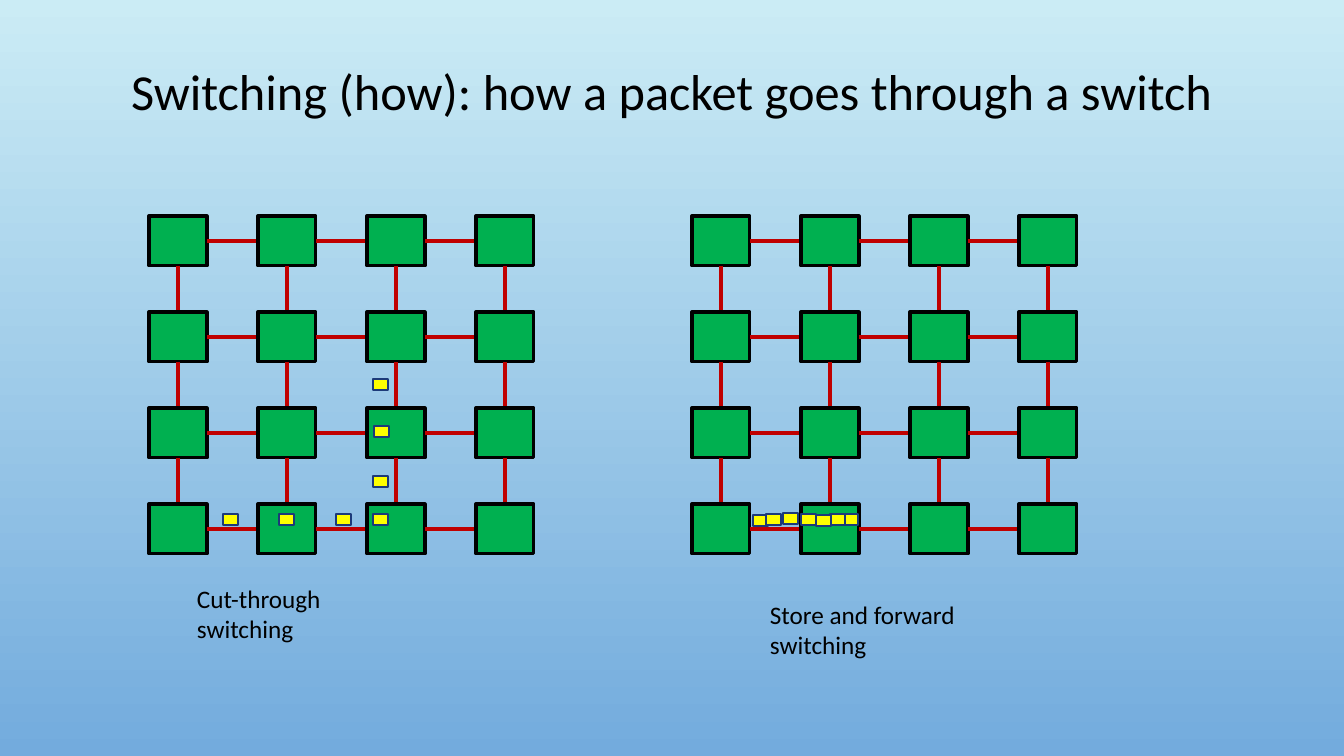
from itertools import product

from pptx import Presentation
from pptx.dml.color import RGBColor
from pptx.enum.shapes import MSO_CONNECTOR, MSO_SHAPE
from pptx.enum.text import MSO_ANCHOR, PP_ALIGN
from pptx.oxml.ns import qn
from pptx.util import Pt
from lxml.etree import SubElement

# Content, lengths in px
TITLE = ("Switching (how): how a packet goes through a switch", (101, 32, 1142, 124))
MESHES = [
    {
        "left": 149,
        "label": "Cut-through switching",
        "label_box": (187, 578, 235, 40),
        "packets": [(373, 379), (374, 426), (373, 476), (373, 514),
                    (336, 514), (279, 514), (223, 514)],
    },
    {
        "left": 692,
        "label": "Store and forward switching",
        "label_box": (760, 594, 306, 40),
        "packets": [(783, 513), (753, 515), (843, 514), (830, 514),
                    (816, 515), (801, 514), (766, 514)],
    },
]

# Geometry, in px
SLIDE_W, SLIDE_H = 1344, 756
EMU_PER_PX = 914400 / 100.8
MESH_SIZE = 4
MESH_TOP = 216
COLUMN_STEP, ROW_STEP = 109, 96
SWITCH_W, SWITCH_H = 58, 50
PACKET_W, PACKET_H = 15, 11

BLACK = RGBColor(0x00, 0x00, 0x00)
SWITCH_GREEN = RGBColor(0x00, 0xB0, 0x50)
WIRE_RED = RGBColor(0xC0, 0x00, 0x00)
PACKET_YELLOW = RGBColor(0xFF, 0xFF, 0x00)
PACKET_EDGE = RGBColor(0x1D, 0x3A, 0x79)
SKY_TOP = RGBColor(0xCB, 0xEC, 0xF5)
SKY_BOTTOM = RGBColor(0x73, 0xAB, 0xDD)


def emu(*lengths):
    return [round(length * EMU_PER_PX) for length in lengths]


def add_text(slide, text, box, *, size=18, align=PP_ALIGN.LEFT,
             anchor=MSO_ANCHOR.TOP, spacing=1.0):
    frame = slide.shapes.add_textbox(*emu(*box)).text_frame
    frame.word_wrap = True
    frame.vertical_anchor = anchor
    paragraph = frame.paragraphs[0]
    paragraph.text = text
    paragraph.alignment = align
    paragraph.line_spacing = spacing
    paragraph.font.name = "Calibri"
    paragraph.font.size = Pt(size)
    paragraph.font.color.rgb = BLACK


def add_block(slide, box, fill, edge, edge_width):
    block = slide.shapes.add_shape(MSO_SHAPE.RECTANGLE, *emu(*box))
    block.shadow.inherit = False
    block.fill.solid()
    block.fill.fore_color.rgb = fill
    block.line.color.rgb = edge
    block.line.width = Pt(edge_width)


def add_wire(slide, *ends):
    wire = slide.shapes.add_connector(MSO_CONNECTOR.STRAIGHT, *emu(*ends))
    wire.line.color.rgb = WIRE_RED
    wire.line.width = Pt(2.25)
    SubElement(wire._element.spPr, qn("a:effectLst"))


def add_mesh(slide, mesh):
    # Switches, each wired to its right and lower neighbours
    for row, column in product(range(MESH_SIZE), repeat=2):
        x = mesh["left"] + column * COLUMN_STEP
        y = MESH_TOP + row * ROW_STEP
        add_block(slide, (x, y, SWITCH_W, SWITCH_H), SWITCH_GREEN, BLACK, 2.25)
        middle_x, middle_y = x + SWITCH_W / 2, y + SWITCH_H / 2
        if column < MESH_SIZE - 1:
            add_wire(slide, x + SWITCH_W, middle_y, x + COLUMN_STEP, middle_y)
        if row < MESH_SIZE - 1:
            add_wire(slide, middle_x, y + SWITCH_H, middle_x, y + ROW_STEP)

    # Packet pieces on their way
    for x, y in mesh["packets"]:
        add_block(slide, (x, y, PACKET_W, PACKET_H), PACKET_YELLOW, PACKET_EDGE, 1.25)

    add_text(slide, mesh["label"], mesh["label_box"])


def main():
    deck = Presentation()
    deck.slide_width, deck.slide_height = emu(SLIDE_W, SLIDE_H)
    slide = deck.slides.add_slide(deck.slide_layouts[6])

    # Background, light at the top
    sky = slide.background.fill
    sky.gradient()
    sky.gradient_angle = 270
    for stop, color, position in zip(sky.gradient_stops, (SKY_TOP, SKY_BOTTOM), (0, 1)):
        stop.color.rgb = color
        stop.position = position

    title, title_box = TITLE
    add_text(slide, title, title_box, size=36, align=PP_ALIGN.CENTER,
             anchor=MSO_ANCHOR.MIDDLE, spacing=0.9)
    for mesh in MESHES:
        add_mesh(slide, mesh)
    deck.save("out.pptx")


if __name__ == "__main__":
    main()
